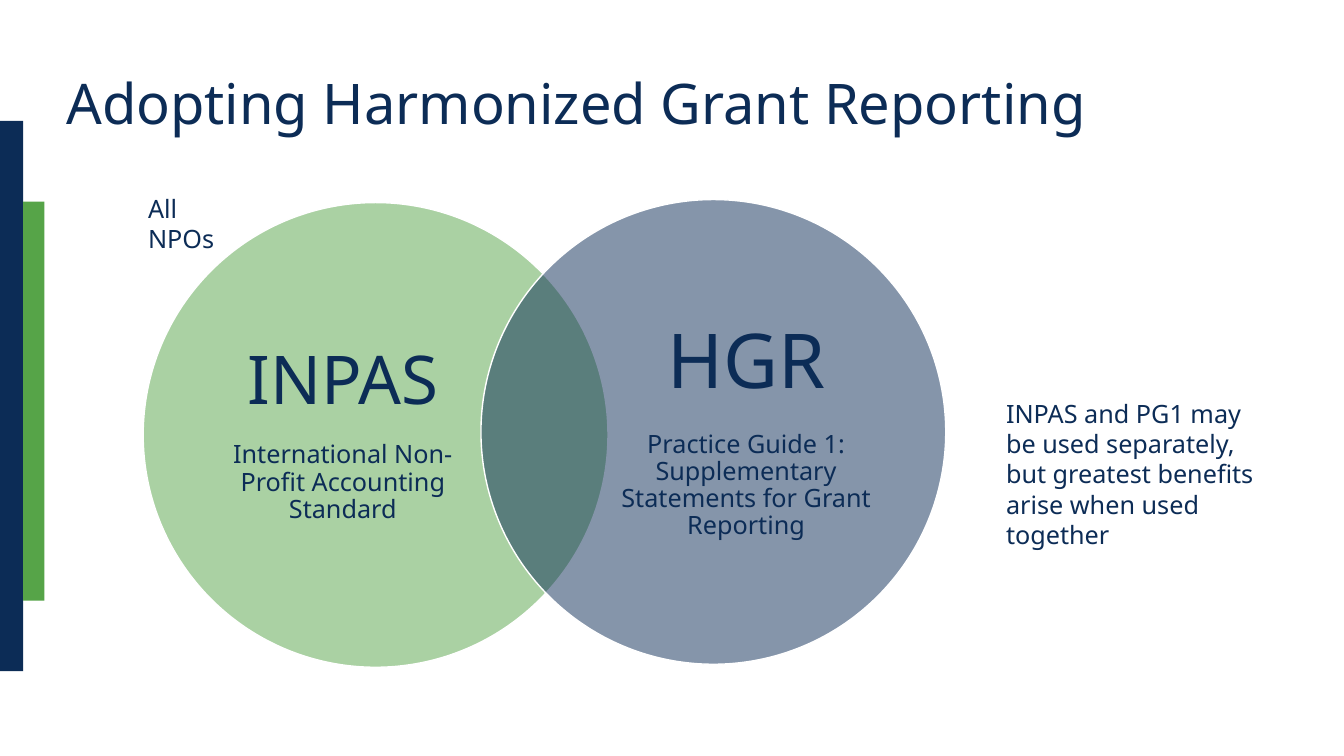
import pptx
import pptx.util
import pptx.dml.color
import pptx.enum.shapes
import pptx.enum.text
import pptx.oxml
import pptx.oxml.ns

Inches, Pt = pptx.util.Inches, pptx.util.Pt
MSO_SHAPE = pptx.enum.shapes.MSO_SHAPE
PP_ALIGN = pptx.enum.text.PP_ALIGN
MIDDLE = pptx.enum.text.MSO_ANCHOR.MIDDLE

COLORS = {"navy": "0C2C56", "green": "56A448", "white": "FFFFFF"}
FONT = "Noto Sans"

deck = pptx.Presentation()
deck.slide_width, deck.slide_height = Inches(13.33), Inches(7.5)
slide = deck.slides.add_slide(deck.slide_layouts[6])


def add_filled(outline, box, color):
    shape = slide.shapes.add_shape(outline, *map(Inches, box))
    shape.shadow.inherit = False
    shape.fill.solid()
    shape.fill.fore_color.rgb = pptx.dml.color.RGBColor.from_string(COLORS[color])
    shape.line.fill.background()
    return shape


def add_text(box, lines):
    """Write one navy paragraph for each (wording, point size) pair."""
    frame = slide.shapes.add_textbox(*map(Inches, box)).text_frame
    frame.word_wrap = True
    frame.text = "\n".join(wording for wording, size in lines)
    for paragraph, (wording, size) in zip(frame.paragraphs, lines):
        font = paragraph.runs[0].font
        font.name, font.size = FONT, Pt(size)
        font.color.rgb = pptx.dml.color.RGBColor.from_string(COLORS["navy"])
    return frame


# Side bars and title
add_filled(MSO_SHAPE.RECTANGLE, (0, 1.2, 0.23, 5.46), "navy")
add_filled(MSO_SHAPE.RECTANGLE, (0.23, 2, 0.21, 3.96), "green")
title = add_text((0.56, 0.33, 11.5, 1.45), [("Adopting Harmonized Grant Reporting", 40)])
title.vertical_anchor = MIDDLE
title.paragraphs[0].line_spacing = 0.9

# Overlapping circles, each followed by its label
diameter, label_width, label_height = 4.61, 2.66, 3.52
standards = [
    (1.42, 2.01, 0.65, "green", "INPAS", 48,
     "International Non-Profit Accounting Standard"),
    (4.77, 1.98, 1.3, "navy", "HGR", 54,
     "Practice Guide 1: Supplementary Statements for Grant Reporting"),
]
for left, top, label_offset, color, acronym, acronym_size, full_name in standards:
    circle = add_filled(MSO_SHAPE.OVAL, (left, top, diameter, diameter), color)
    circle.line.color.rgb = pptx.dml.color.RGBColor.from_string(COLORS["white"])
    circle.line.width = Pt(1)
    fill_color = circle.fill._xPr.find(pptx.oxml.ns.qn("a:solidFill"))[0]
    alpha = pptx.oxml.parse_xml(f'<a:alpha {pptx.oxml.ns.nsdecls("a")} val="50000"/>')
    fill_color.append(alpha)

    label_top = top + (diameter - label_height) / 2
    sizes = (acronym_size, 18)
    label = add_text((left + label_offset, label_top, label_width, label_height),
                     list(zip((acronym, full_name), sizes)))
    label.vertical_anchor = MIDDLE
    label.margin_left = label.margin_right = label.margin_top = label.margin_bottom = 0
    for paragraph, size in zip(label.paragraphs, sizes):
        paragraph.alignment = PP_ALIGN.CENTER
        paragraph.line_spacing = 0.9
        paragraph.space_after = Pt(0.35 * size)

# Remarks beside the circles
add_text((1.37, 1.87, 1.16, 0.4), [("All NPOs", 18)])
add_text((9.88, 3.9, 2.76, 1.62), [
    ("INPAS and PG1 may be used separately, but greatest benefits arise when used together", 18)])

deck.save("out.pptx")
